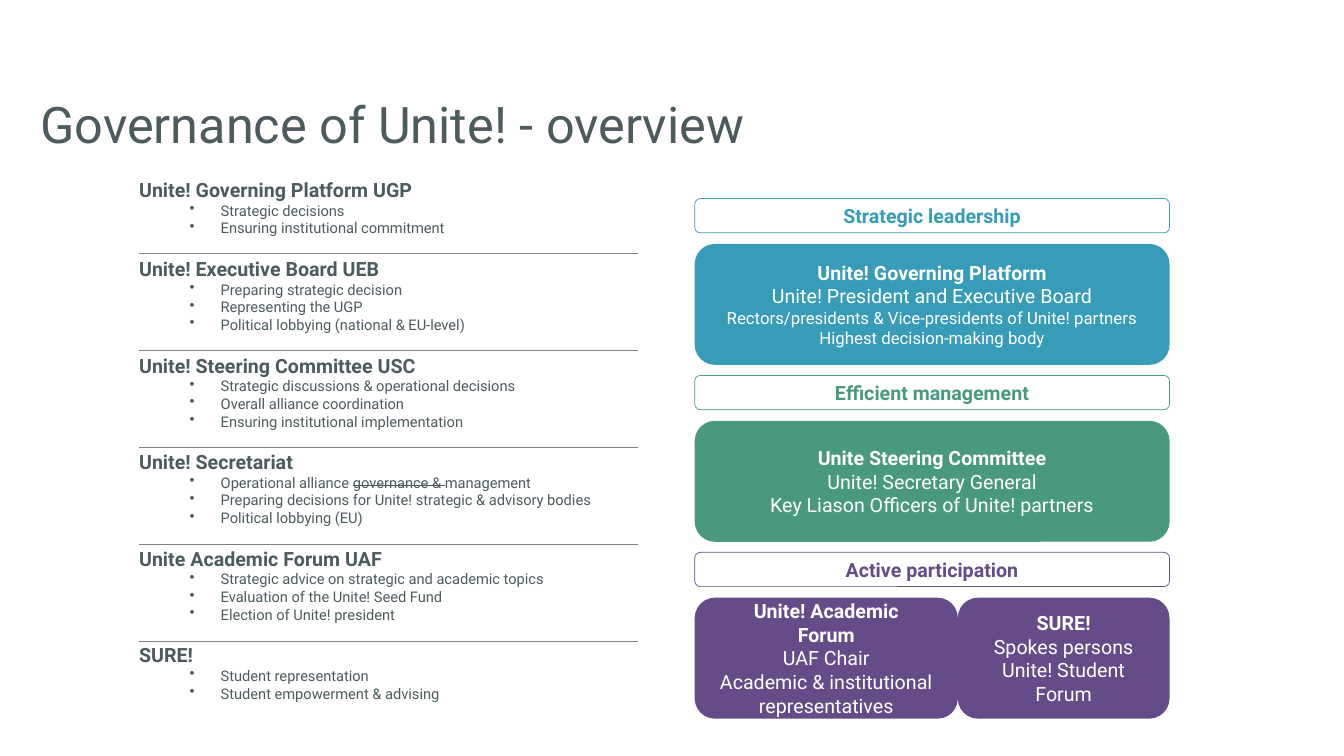
import pptx
import pptx.dml.color
import pptx.enum.shapes
import pptx.enum.text
import pptx.oxml
import pptx.oxml.ns
import pptx.util
from pptx.util import Inches

SLATE = pptx.dml.color.RGBColor(0x4C, 0x5B, 0x5D)
GREY = pptx.dml.color.RGBColor(0x7F, 0x7F, 0x7F)
WHITE = pptx.dml.color.RGBColor(0xFF, 0xFF, 0xFF)
BLUE = pptx.dml.color.RGBColor(0x36, 0x9C, 0xB8)
GREEN = pptx.dml.color.RGBColor(0x49, 0x99, 0x7F)
PURPLE = pptx.dml.color.RGBColor(0x65, 0x4C, 0x88)

TITLE = {"size": pptx.util.Pt(36)}
HEADING = {"size": pptx.util.Pt(14), "bold": True}
BODY = {"size": pptx.util.Pt(14), "bold": False}
SMALL = {"size": pptx.util.Pt(12), "bold": False}
BULLET = {"size": pptx.util.Pt(10.5), "bold": False}
PLAIN_FRAME = {"word_wrap": True, "margin_left": 0, "margin_top": 0,
               "margin_right": 0, "margin_bottom": 0}

BODIES = [
    ("Unite! Governing Platform UGP",
     ["Strategic decisions", "Ensuring institutional commitment"]),
    ("Unite! Executive Board UEB",
     ["Preparing strategic decision", "Representing the UGP",
      "Political lobbying (national & EU-level)"]),
    ("Unite! Steering Committee USC",
     ["Strategic discussions & operational decisions",
      "Overall alliance coordination", "Ensuring institutional implementation"]),
    ("Unite! Secretariat",
     ["Operational alliance ~governance & ~management",
      "Preparing decisions for Unite! strategic & advisory bodies",
      "Political lobbying (EU)"]),
    ("Unite Academic Forum UAF",
     ["Strategic advice on strategic and academic topics",
      "Evaluation of the Unite! Seed Fund", "Election of Unite! president"]),
    ("SURE!",
     ["Student representation", "Student empowerment & advising"]),
]

PILLARS = [
    ("Strategic leadership", BLUE, [
        (4.71, [("Unite! Governing Platform", HEADING),
                ("Unite! President and Executive Board", BODY),
                ("Rectors/presidents & Vice-presidents of Unite! partners", SMALL),
                ("Highest decision-making body", SMALL)])]),
    ("Efficient management", GREEN, [
        (4.71, [("Unite Steering Committee", HEADING),
                ("Unite! Secretary General", BODY),
                ("Key Liason Officers of Unite! partners", BODY)])]),
    ("Active participation", PURPLE, [
        (2.61, [("Unite! Academic", HEADING), ("Forum", HEADING),
                ("UAF Chair", BODY),
                ("Academic & institutional representatives", BODY)]),
        (2.1, [("SURE!", HEADING), ("Spokes persons", BODY),
               ("Unite! Student Forum", BODY)])]),
]


def apply_format(target, values):
    """Set each attribute of the target from a dict."""
    for name, value in values.items():
        setattr(target, name, value)


def add_run(paragraph, text, values, color):
    """Add a formatted run to a paragraph and return it."""
    run = paragraph.add_run()
    run.text = text
    apply_format(run.font, {"name": "Roboto", **values})
    run.font.color.rgb = color
    return run


def next_paragraph(frame):
    """Return the empty first paragraph of a frame, or a new one."""
    first = frame.paragraphs[0]
    return frame.add_paragraph() if first.runs else first


def add_plain_frame(slide, left, top, width, height):
    """Add a text box without margins and return its text frame."""
    box = slide.shapes.add_textbox(
        Inches(left), Inches(top), Inches(width), Inches(height))
    apply_format(box.text_frame, PLAIN_FRAME)
    return box.text_frame


def add_title(slide, left, top, width, height):
    """Add the slide title."""
    frame = add_plain_frame(slide, left, top, width, height)
    add_run(frame.paragraphs[0], "Governance of Unite! - overview", TITLE, SLATE)


def add_bullet(paragraph, text):
    """Fill a bulleted paragraph, striking the parts between tildes."""
    paragraph.level = 2
    properties = paragraph._p.get_or_add_pPr()
    properties.set("marL", str(Inches(0.81)))
    properties.set("indent", str(Inches(-0.31)))
    properties.append(pptx.oxml.parse_xml(
        f'<a:buChar {pptx.oxml.ns.nsdecls("a")} char="•"/>'))
    for index, part in enumerate(text.split("~")):
        run = add_run(paragraph, part, BULLET, SLATE)
        if index % 2:
            run.font._element.set("strike", "sngStrike")


def add_body_list(slide, left, top, width, height):
    """Add the governing bodies, their tasks and the lines between them."""
    frame = add_plain_frame(slide, left, top, width, height)
    for index, (name, tasks) in enumerate(BODIES):
        paragraph = next_paragraph(frame)
        paragraph.line_spacing = 1.5
        if index:
            paragraph.space_before = pptx.util.Pt(6)
            add_separator(slide, left, top + 0.87 + 0.96 * (index - 1), 4.95)
        add_run(paragraph, name, HEADING, SLATE)
        for task in tasks:
            add_bullet(frame.add_paragraph(), task)


def add_separator(slide, left, top, width):
    """Add a thin horizontal line."""
    line = slide.shapes.add_connector(
        pptx.enum.shapes.MSO_CONNECTOR.STRAIGHT,
        Inches(left), Inches(top), Inches(left + width), Inches(top))
    line.line.color.rgb = GREY
    line.line.width = pptx.util.Pt(0.75)
    line._element.spPr.append(pptx.oxml.parse_xml(
        f'<a:effectLst {pptx.oxml.ns.nsdecls("a")}/>'))


def add_card(slide, left, top, width, height, lines, color, filled):
    """Add a rounded card, either filled or outlined in the colour."""
    card = slide.shapes.add_shape(
        pptx.enum.shapes.MSO_SHAPE.ROUNDED_RECTANGLE,
        Inches(left), Inches(top), Inches(width), Inches(height))
    card.shadow.inherit = False
    if filled:
        card.fill.solid()
        card.fill.fore_color.rgb = color
        card.line.fill.background()
    else:
        card.fill.background()
        card.line.color.rgb = color
        card.line.width = pptx.util.Pt(0.5)
    frame = card.text_frame
    apply_format(frame, {"word_wrap": True,
                         "vertical_anchor": pptx.enum.text.MSO_ANCHOR.MIDDLE})
    for text, values in lines:
        paragraph = next_paragraph(frame)
        paragraph.alignment = pptx.enum.text.PP_ALIGN.CENTER
        add_run(paragraph, text, values, WHITE if filled else color)


def add_pillar(slide, left, top, width, label, color, cards):
    """Add a label and the row of filled cards beneath it."""
    add_card(slide, left, top, width, 0.34, [(label, HEADING)], color, False)
    for card_width, lines in cards:
        add_card(slide, left, top + 0.45, card_width, 1.2, lines, color, True)
        left += card_width


def main():
    """Build and save the slide."""
    presentation = pptx.Presentation()
    presentation.slide_width = Inches(13.33)
    presentation.slide_height = Inches(7.5)
    slide = presentation.slides.add_slide(presentation.slide_layouts[6])
    add_title(slide, 0.4, 0.92, 12.54, 0.91)
    add_body_list(slide, 1.38, 1.65, 4.87, 4.82)
    for index, pillar in enumerate(PILLARS):
        add_pillar(slide, 6.89, 1.97 + 1.755 * index, 4.71, *pillar)
    presentation.save("out.pptx")


if __name__ == "__main__":
    main()
